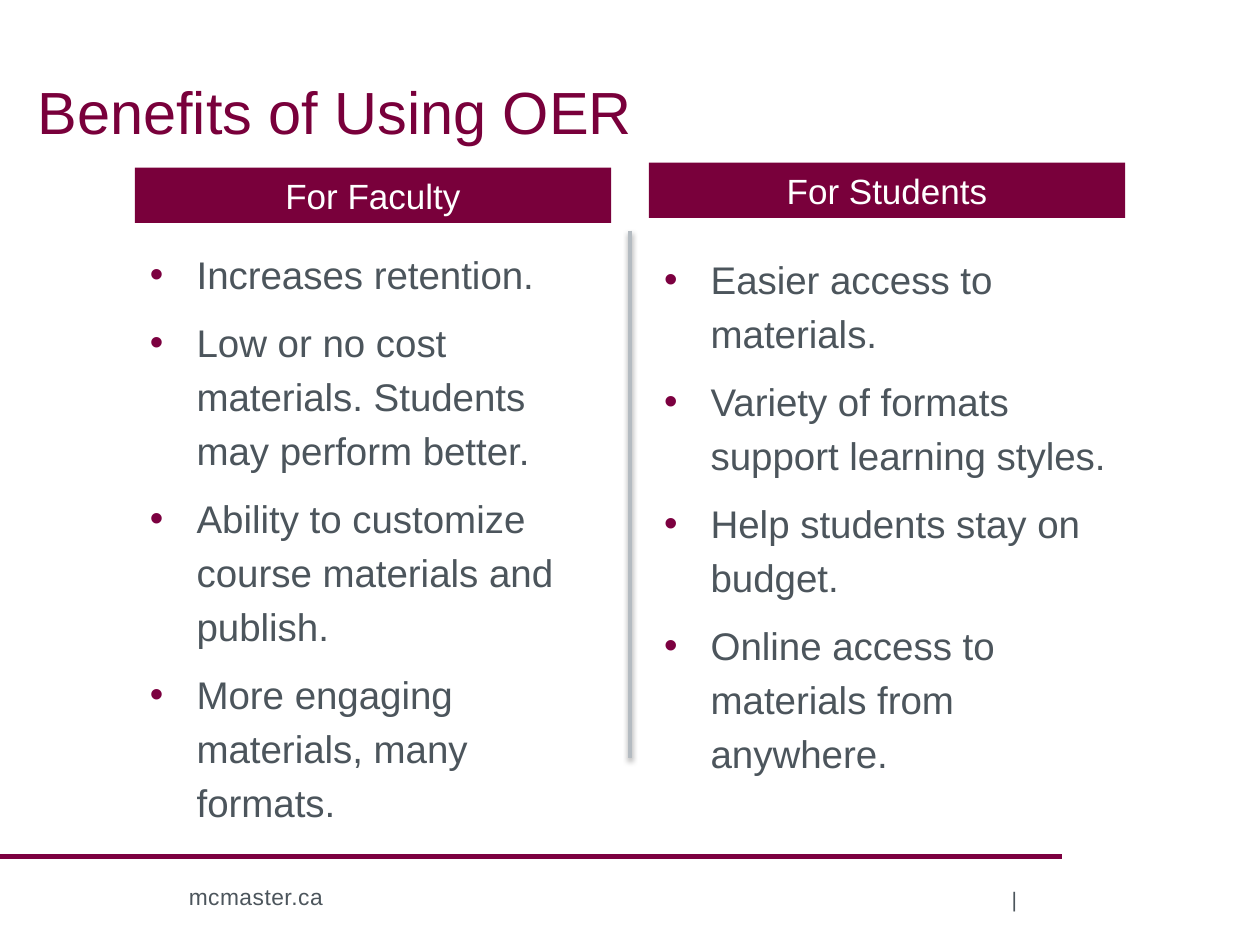
from lxml import etree
from pptx import Presentation
from pptx import util as u
from pptx.dml.color import RGBColor
from pptx.enum import shapes, text
from pptx.oxml.ns import qn

COLORS = {"maroon": "79003B", "rule": "7C0040", "body": "4C555C",
          "divider": "B4BBC1", "white": "FFFFFF", "shadow": "000000"}
WIDTH, HEIGHT = 10, 7.5
COLUMN, GUTTER = 3.78, 0.3
BENEFITS = [
    ("For Faculty", 1.33, 1.88, [
        "Increases retention.",
        "Low or no cost materials. Students may perform better.",
        "Ability to customize course materials and publish.",
        "More engaging materials, many formats."]),
    ("For Students", 1.29, 1.92, [
        "Easier access to materials.",
        "Variety of formats support learning styles.",
        "Help students stay on budget.",
        "Online access to materials from anywhere."]),
]


def rgb(name):
    return RGBColor.from_string(COLORS[name])


def inches(box):
    return [u.Inches(length) for length in box]


def add_bullet(paragraph, color, indent):
    props = paragraph._p.get_or_add_pPr()
    props.set("marL", str(u.Inches(indent)))
    props.set("indent", str(-u.Inches(indent)))
    tint = etree.SubElement(props, qn("a:buClr"))
    etree.SubElement(tint, qn("a:srgbClr"), val=COLORS[color])
    etree.SubElement(props, qn("a:buFont"), typeface="Arial")
    etree.SubElement(props, qn("a:buChar"), char="•")


def write(frame, lines, size, color, align=text.PP_ALIGN.LEFT,
          anchor=text.MSO_ANCHOR.TOP, insets=(0.1, 0.05, 0.1, 0.05),
          spacing=None, after=None, bullet=None, tracking=None):
    frame.word_wrap = True
    frame.auto_size = text.MSO_AUTO_SIZE.NONE
    frame.vertical_anchor = anchor
    (frame.margin_left, frame.margin_top,
     frame.margin_right, frame.margin_bottom) = inches(insets)
    for index, line in enumerate(lines):
        paragraph = frame.add_paragraph() if index else frame.paragraphs[0]
        if bullet:
            add_bullet(paragraph, bullet, 0.37)
        paragraph.alignment = align
        paragraph.line_spacing = spacing
        if after is not None:
            paragraph.space_after = u.Pt(after)
        run = paragraph.add_run()
        run.text = line
        run.font.name = "Arial"
        run.font.size = u.Pt(size)
        run.font.color.rgb = rgb(color)
        if tracking:
            run._r.get_or_add_rPr().set("spc", str(round(tracking * 100)))


def add_line(slide, start, end, color, width, shadow=False):
    line = slide.shapes.add_connector(
        shapes.MSO_CONNECTOR.STRAIGHT, *inches(start + end))
    line.line.color.rgb = rgb(color)
    line.line.width = u.Pt(width)
    effects = etree.SubElement(line._element.spPr, qn("a:effectLst"))
    if shadow:
        outer = etree.SubElement(
            effects, qn("a:outerShdw"), blurRad=str(u.Pt(3.1)),
            dist=str(u.Pt(1.6)), dir="5400000", rotWithShape="0")
        tint = etree.SubElement(outer, qn("a:srgbClr"), val=COLORS["shadow"])
        etree.SubElement(tint, qn("a:alpha"), val="38000")


def add_footer(slide, top):
    add_line(slide, (0, top), (8.43, top), "rule", 3)
    address = slide.shapes.add_textbox(*inches((1.4, top + 0.16, 2.74, 0.32)))
    write(address.text_frame, ["mcmaster.ca"], 13, "body", tracking=0.3)
    mark = slide.shapes.add_textbox(*inches((7.92, top + 0.14, 0.25, 0.4)))
    write(mark.text_frame, ["|"], 12, "body", align=text.PP_ALIGN.RIGHT,
          anchor=text.MSO_ANCHOR.MIDDLE)


def add_title(slide, box):
    title = slide.shapes.title
    title.left, title.top, title.width, title.height = inches(box)
    write(title.text_frame, ["Benefits of Using OER"], 34, "maroon",
          anchor=text.MSO_ANCHOR.BOTTOM, insets=(0.1, 0.05, 0.1, 0),
          spacing=1.5)


def add_benefits(slide, left, heading, heading_top, list_top, benefits):
    banner = slide.shapes.add_shape(
        shapes.MSO_SHAPE.RECTANGLE,
        *inches((left, heading_top, COLUMN, 0.44)))
    banner.shadow.inherit = False
    banner.fill.solid()
    banner.fill.fore_color.rgb = rgb("maroon")
    banner.line.fill.background()
    write(banner.text_frame, [heading], 20, "white",
          align=text.PP_ALIGN.CENTER, anchor=text.MSO_ANCHOR.MIDDLE)
    points = slide.shapes.add_textbox(*inches((left, list_top, COLUMN, 4.52)))
    write(points.text_frame, benefits, 22, "body",
          insets=(0.12, 0.05, 0.1, 0.05), spacing=1.17, after=8,
          bullet="rule")


def main():
    deck = Presentation()
    deck.slide_width, deck.slide_height = inches((WIDTH, HEIGHT))
    slide = deck.slides.add_slide(deck.slide_layouts[5])
    add_footer(slide, 6.8)
    add_title(slide, (0.2, 0.44, WIDTH - 0.4, 0.72))
    first_left = (WIDTH - GUTTER) / 2 - COLUMN
    for index, column in enumerate(BENEFITS):
        add_benefits(slide, first_left + index * (COLUMN + GUTTER), *column)
    add_line(slide, (WIDTH / 2, 1.83), (WIDTH / 2, 6.02), "divider", 2,
             shadow=True)
    deck.save("out.pptx")


if __name__ == "__main__":
    main()
